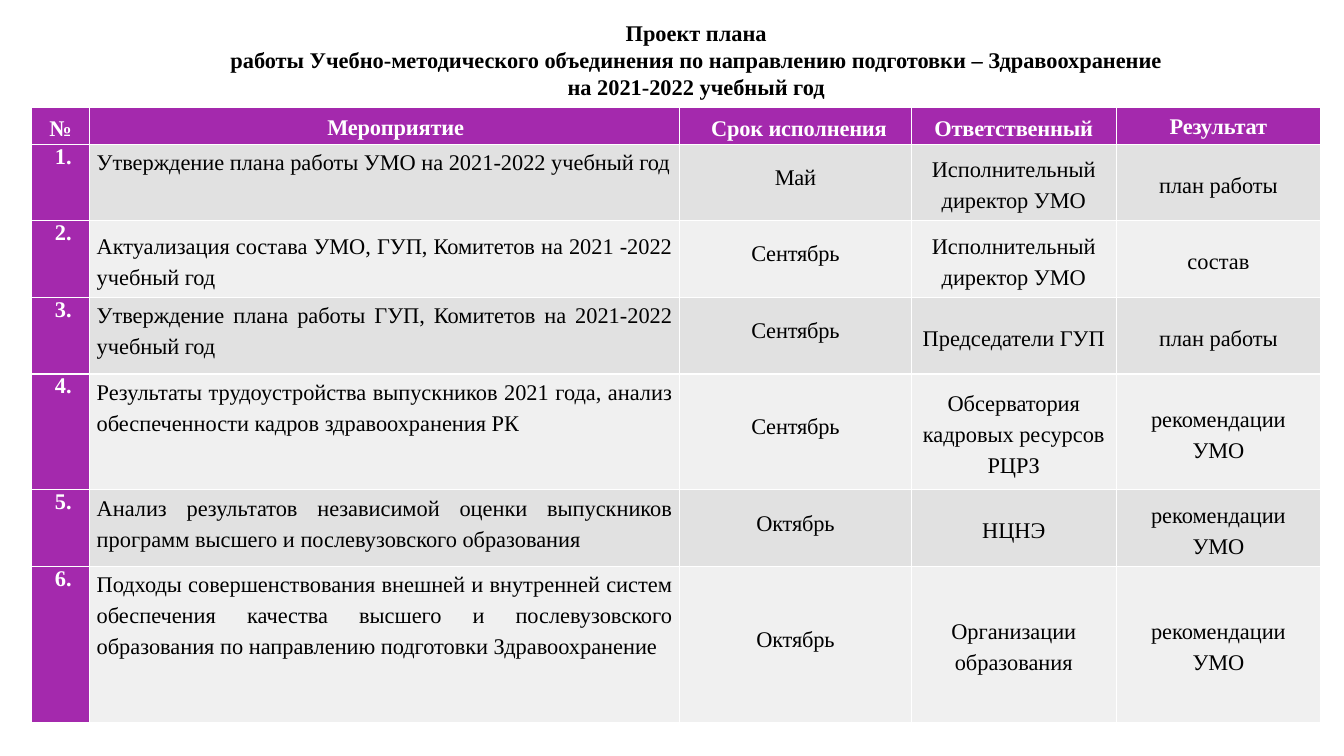
from pptx import Presentation
from pptx.dml.color import RGBColor
from pptx.enum.text import MSO_ANCHOR, PP_ALIGN
from pptx.util import Inches, Pt

FONT = {"name": "Times New Roman", "size": Pt(16)}
PURPLE, WHITE, BLACK = "A429AD", "FFFFFF", "000000"
BANDS = ("E1E1E1", "F0F0F0")

TITLE = (
    "Проект плана",
    "работы Учебно-методического объединения по направлению подготовки – Здравоохранение",
    "на 2021-2022 учебный год",
)
HEADERS = ("№", "Мероприятие", "Срок исполнения", "Ответственный", "Результат")
ACTIVITIES = (
    ("Утверждение плана работы УМО на 2021-2022 учебный год",
     "Май", "Исполнительный директор УМО", "план работы"),
    ("Актуализация состава УМО, ГУП, Комитетов на 2021 -2022 учебный год",
     "Сентябрь", "Исполнительный директор УМО", "состав"),
    ("Утверждение плана работы ГУП, Комитетов на 2021-2022 учебный год",
     "Сентябрь", "Председатели ГУП", "план работы"),
    ("Результаты трудоустройства выпускников 2021 года, анализ обеспеченности кадров "
     "здравоохранения РК",
     "Сентябрь", "Обсерватория кадровых ресурсов РЦРЗ", "рекомендации УМО"),
    ("Анализ результатов независимой оценки выпускников программ высшего и "
     "послевузовского образования",
     "Октябрь", "НЦНЭ", "рекомендации УМО"),
    ("Подходы совершенствования внешней и внутренней систем обеспечения качества "
     "высшего и послевузовского образования по направлению подготовки Здравоохранение",
     "Октябрь", "Организации образования", "рекомендации УМО"),
)
COLUMN_WIDTHS = (0.58, 5.85, 2.3, 2.03, 2.03)
ROW_HEIGHTS = (0.36, 0.76, 0.76, 0.76, 1.15, 0.76, 1.55)

# Paragraph formats of the table
HEADER = {"alignment": PP_ALIGN.CENTER, "line_spacing": 1.25}
NUMBER = {"alignment": PP_ALIGN.RIGHT}
ACTIVITY = {"alignment": PP_ALIGN.JUSTIFY, "line_spacing": 1.25}
MONTH = {"alignment": PP_ALIGN.CENTER, "line_spacing": Pt(11.1)}
COLUMN_FORMATS = (NUMBER, ACTIVITY, MONTH, HEADER, HEADER)
HEADER_INDENTS = (0, 0.22, 0.07, 0, 0)


def color(value):
    return RGBColor.from_string(value)


def apply(target, values):
    for name, value in values.items():
        setattr(target, name, value)


def write(paragraph, text, text_color, bold, formats, tight=False):
    run = paragraph.add_run()
    run.text = text
    apply(paragraph, formats)
    apply(run.font, FONT | {"bold": bold})
    run.font.color.rgb = color(text_color)
    if tight:
        run.font._element.set("spc", "-10")


def fill_cell(cell, fill, anchor, right=0.07):
    cell.fill.solid()
    cell.fill.fore_color.rgb = color(fill)
    apply(cell, {
        "vertical_anchor": anchor,
        "margin_left": Inches(0.07),
        "margin_right": Inches(right),
        "margin_top": 0,
        "margin_bottom": 0,
    })
    return cell.text_frame.paragraphs[0]


def add_title(slide, left, top, width, height):
    box = slide.shapes.add_textbox(Inches(left), Inches(top), Inches(width), Inches(height))
    frame = box.text_frame
    frame.word_wrap = True
    for index, line in enumerate(TITLE):
        paragraph = frame.add_paragraph() if index else frame.paragraphs[0]
        write(paragraph, line, BLACK, True, {"alignment": PP_ALIGN.CENTER})


def add_plan_table(slide, left, top):
    table = slide.shapes.add_table(
        len(ROW_HEIGHTS), len(COLUMN_WIDTHS), Inches(left), Inches(top),
        Inches(sum(COLUMN_WIDTHS)), Inches(sum(ROW_HEIGHTS))).table
    apply(table, {"first_row": False, "horz_banding": False})
    for column, width in zip(table.columns, COLUMN_WIDTHS):
        column.width = Inches(width)
    for row, height in zip(table.rows, ROW_HEIGHTS):
        row.height = Inches(height)

    # Header row
    for index, (header, indent) in enumerate(zip(HEADERS, HEADER_INDENTS)):
        anchor = MSO_ANCHOR.TOP if header == "Результат" else MSO_ANCHOR.MIDDLE
        paragraph = fill_cell(table.cell(0, index), PURPLE, anchor)
        spacing = {"line_spacing": 1.15} if header == "Мероприятие" else {}
        write(paragraph, header, WHITE, True, HEADER | spacing, tight=True)
        if indent:
            paragraph._p.get_or_add_pPr().set("indent", str(Inches(indent)))

    # Numbered activities
    for number, activity in enumerate(ACTIVITIES, 1):
        band = BANDS[(number - 1) % 2]
        for index, text in enumerate((f"{number}.", *activity)):
            is_number = index == 0
            at_top = is_number or (index == 1 and number != 2)
            paragraph = fill_cell(
                table.cell(number, index),
                PURPLE if is_number else band,
                MSO_ANCHOR.TOP if at_top else MSO_ANCHOR.MIDDLE,
                right=0.18 if is_number else 0.07)
            write(paragraph, text, WHITE if is_number else BLACK, is_number,
                  COLUMN_FORMATS[index], tight=index == 2)


def main():
    presentation = Presentation()
    presentation.slide_width = Inches(13.33)
    presentation.slide_height = Inches(7.5)
    slide = presentation.slides.add_slide(presentation.slide_layouts[6])
    add_plan_table(slide, 0.31, 1.07)
    add_title(slide, 1.09, 0.14, 11.63, 1.21)
    presentation.save("out.pptx")


if __name__ == "__main__":
    main()
